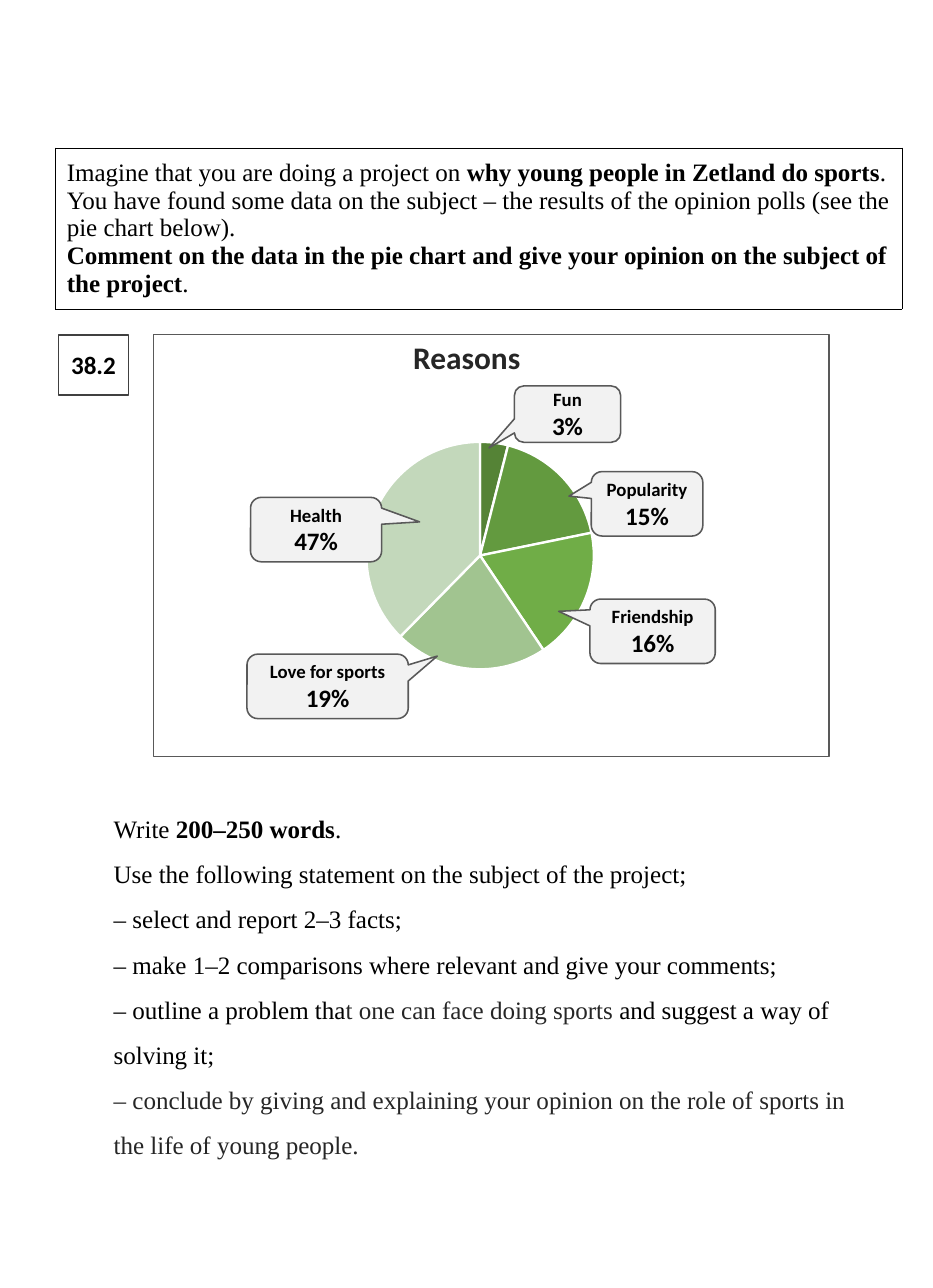
import pptx
import pptx.chart.data
import pptx.dml.color
import pptx.enum.chart
import pptx.enum.shapes
import pptx.enum.text
import pptx.oxml
import pptx.oxml.ns
import pptx.util

Cm = pptx.util.Cm
Pt = pptx.util.Pt
KIND = pptx.enum.shapes.MSO_SHAPE
ALIGN = pptx.enum.text.PP_ALIGN
MID = pptx.enum.text.MSO_ANCHOR.MIDDLE
TOP = pptx.enum.text.MSO_ANCHOR.TOP

SERIF = {"name": "Times New Roman", "size": Pt(16)}
SANS = {"name": "Calibri", "size": Pt(16), "bold": True}
SMALL = {**SANS, "size": Pt(12)}
HEAD = {**SANS, "size": Pt(20)}
BOLD = {**SERIF, "bold": True}
BLACK, SOFT, GREY, PALE = "000000", "262626", "595959", "F2F2F2"

TASK = [
    [("Imagine that you are doing a project on ", SERIF, BLACK),
     ("why young people in Zetland do sports", BOLD, BLACK),
     (". You have found some data on the subject – the results of the opinion polls "
      "(see the pie chart below).", SERIF, BLACK)],
    [("Comment on the data in the pie chart and give your opinion on the subject of "
      "the project", BOLD, BLACK), (".", SERIF, BLACK)],
]
STEPS = [
    [("Write ", SERIF, BLACK), ("200–250 words", BOLD, BLACK), (".", SERIF, BLACK)],
    [("Use the following statement on the subject of the project;", SERIF, BLACK)],
    [("– select and report 2–3 facts;", SERIF, BLACK)],
    [("– make 1–2 comparisons where relevant and give your comments;", SERIF, BLACK)],
    [("– outline a problem tha", SERIF, BLACK),
     ("t one can face doing sports ", SERIF, SOFT),
     ("and suggest a way of solving it;", SERIF, BLACK)],
    [("– conclude by giving and explaining your opinion on the role of sports in "
      "the life of young people.", SERIF, SOFT)],
]
SLICES = [(4, "558336"), (18, "639A3F"), (19, "70AD47"), (22, "A1C490"), (38, "C3D8BB")]
CALLS = [
    ("Health", "47%", (5.64, 11.2, 2.95, 1.45), (0.79, -0.12)),
    ("Love for sports", "19%", (5.56, 14.73, 3.63, 1.45), (0.68, -0.47)),
    ("Friendship", "16%", (13.28, 13.49, 2.82, 1.45), (-0.75, -0.31)),
    ("Popularity", "15%", (13.31, 10.62, 2.51, 1.45), (-0.7, -0.12)),
    ("Fun", "3%", (11.58, 8.69, 2.39, 1.27), (-0.74, 0.6)),
]
PLOT = {"x": 0.23, "y": 0.23, "w": 0.75, "h": 0.63}


def tint(text):
    return pptx.dml.color.RGBColor.from_string(text)


def place(box):
    return [Cm(n) for n in box]


def apply(item, style):
    for key, value in style.items():
        setattr(item, key, value)


def write(frame, paras, style, **form):
    apply(frame, {"word_wrap": True, **form})
    for i, runs in enumerate(paras):
        para = frame.paragraphs[0] if i == 0 else frame.add_paragraph()
        apply(para, style)
        for text, font, shade in runs:
            run = para.add_run()
            run.text = text
            apply(run.font, font)
            run.font.color.rgb = tint(shade)


def draw(slide, kind, box, fill, edge, width):
    shape = slide.shapes.add_shape(kind, *place(box))
    shape.shadow.inherit = False
    if fill:
        shape.fill.solid()
        shape.fill.fore_color.rgb = tint(fill)
    else:
        shape.fill.background()
    shape.line.color.rgb = tint(edge)
    shape.line.width = Pt(width)
    return shape


def add_task(slide):
    table = slide.shapes.add_table(1, 1, *place((1.25, 3.33, 19.05, 3.63))).table
    apply(table, {"first_row": False, "horz_banding": False})
    cell = table.cell(0, 0)
    write(cell.text_frame, TASK, {})
    cell.vertical_anchor = MID
    props = cell._tc.get_or_add_tcPr()
    for side in ("lnL", "lnR", "lnT", "lnB"):
        props.append(pptx.oxml.parse_xml(
            f'<a:{side} {pptx.oxml.ns.nsdecls("a")} w="6350"><a:solidFill>'
            f'<a:srgbClr val="{BLACK}"/></a:solidFill></a:{side}>'))
    cell.fill.background()


def add_pie(slide):
    data = pptx.chart.data.CategoryChartData()
    data.categories = [str(i + 1) for i in range(len(SLICES))]
    data.add_series("Series 1", [value for value, _ in SLICES])
    chart = slide.shapes.add_chart(
        pptx.enum.chart.XL_CHART_TYPE.PIE, *place((5.49, 8.08, 8.79, 8.13)), data).chart
    apply(chart, {"has_title": False, "has_legend": False})
    apply(chart.font, {"name": "Calibri", "size": Pt(10)})
    chart.font.color.rgb = tint(BLACK)
    plot = chart.plots[0]
    plot.vary_by_categories = True
    for i, (_, shade) in enumerate(SLICES):
        form = plot.series[0].points[i].format
        form.fill.solid()
        form.fill.fore_color.rgb = tint(shade)
        form.line.color.rgb = tint("FFFFFF")
        form.line.width = Pt(1.5)
    area = chart._chartSpace.chart.plotArea
    for old in area.findall(pptx.oxml.ns.qn("c:layout")):
        area.remove(old)
    marks = '<c:layoutTarget val="inner"/><c:xMode val="edge"/><c:yMode val="edge"/>'
    marks += "".join(f'<c:{key} val="{value}"/>' for key, value in PLOT.items())
    area.insert(0, pptx.oxml.parse_xml(
        f'<c:layout {pptx.oxml.ns.nsdecls("c")}><c:manualLayout>{marks}'
        '</c:manualLayout></c:layout>'))


def add_calls(slide):
    tight = dict.fromkeys(
        ("margin_left", "margin_right", "margin_top", "margin_bottom"), 0)
    for label, share, box, tip in CALLS:
        call = draw(slide, KIND.ROUNDED_RECTANGULAR_CALLOUT, box, PALE, GREY, 1)
        for i, value in enumerate(tip):
            call.adjustments[i] = value
        write(call.text_frame, [[(label, SMALL, BLACK)], [(share, SANS, BLACK)]],
              {"alignment": ALIGN.CENTER}, vertical_anchor=MID, **tight)


def main():
    deck = pptx.Presentation()
    apply(deck, {"slide_width": Cm(21), "slide_height": Cm(29)})
    slide = deck.slides.add_slide(deck.slide_layouts[5])
    title = slide.shapes.title
    names = ("left", "top", "width", "height")
    apply(title, dict(zip(names, place((3.99, 7.49, 13.03, 1.12)))))
    write(title.text_frame, [[("Reasons", HEAD, SOFT)]], {"alignment": ALIGN.CENTER},
          vertical_anchor=TOP, auto_size=pptx.enum.text.MSO_AUTO_SIZE.NONE)
    add_task(slide)
    badge = draw(slide, KIND.RECTANGLE, (1.32, 7.54, 1.57, 1.35), "FFFFFF", "404040", 1)
    write(badge.text_frame, [[("38.2", SANS, BLACK)]], {"alignment": ALIGN.CENTER},
          vertical_anchor=MID, margin_left=0, margin_right=0)
    add_pie(slide)
    draw(slide, KIND.RECTANGLE, (3.45, 7.54, 15.21, 9.5), None, GREY, 0.75)
    add_calls(slide)
    body = slide.shapes.add_textbox(*place((2.31, 17.86, 17.55, 8.33)))
    write(body.text_frame, STEPS, {"line_spacing": 1.5})
    deck.save("out.pptx")


if __name__ == "__main__":
    main()
